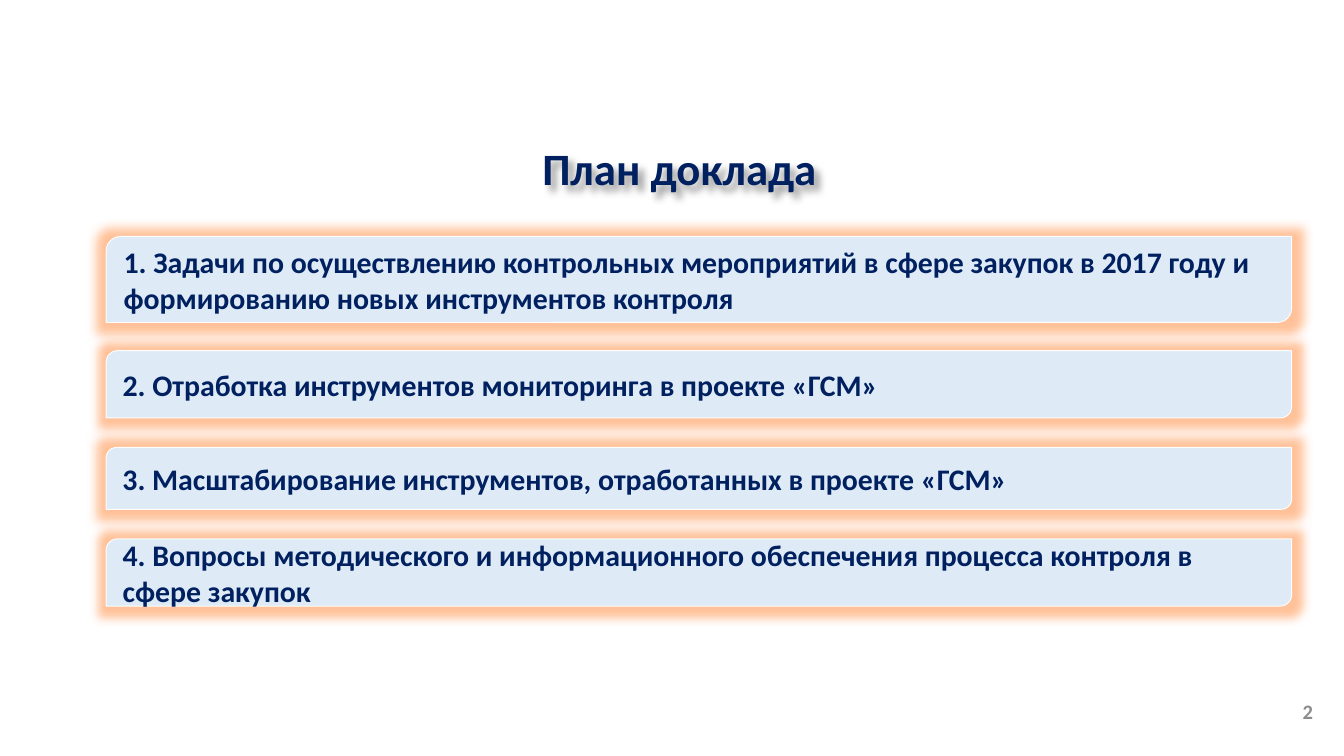
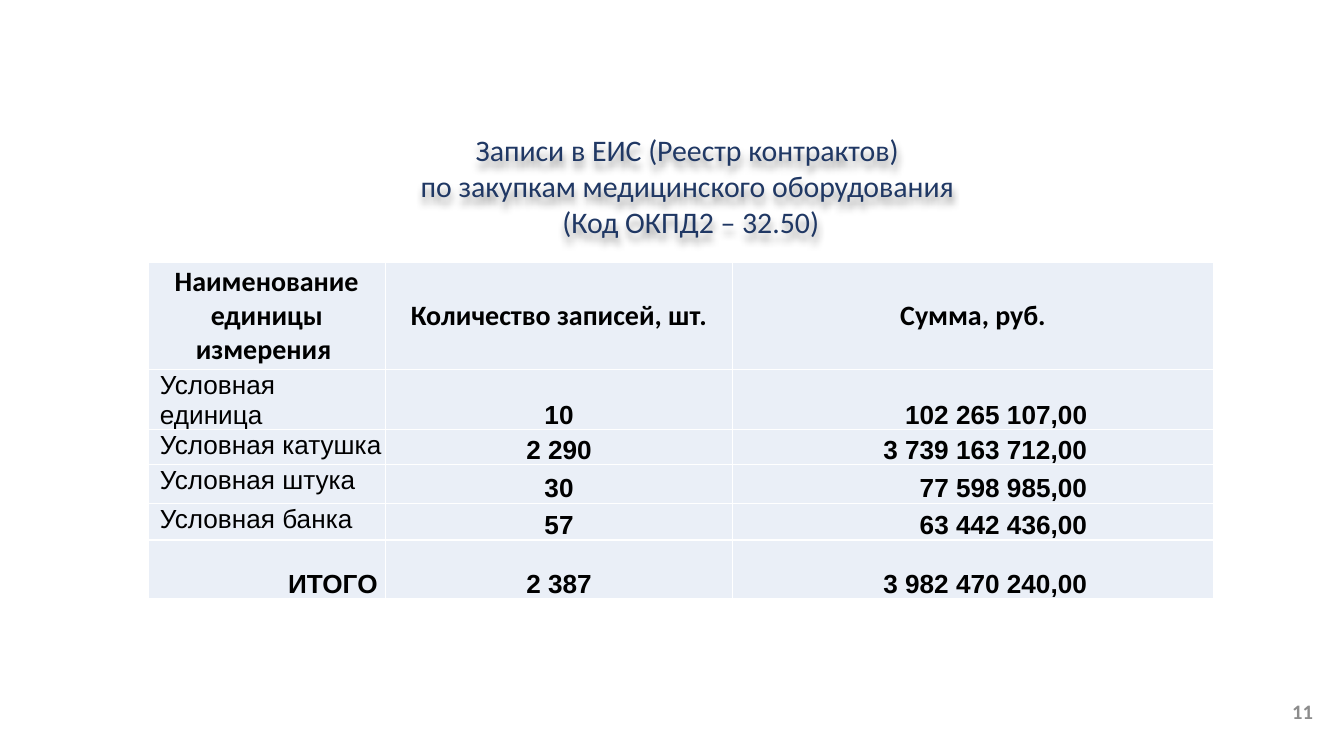
"""Build two slides: a report plan and a table of contract register records."""
from copy import deepcopy
from dataclasses import dataclass

from lxml.etree import SubElement
from pptx import Presentation
from pptx.dml.color import RGBColor
from pptx.enum.shapes import MSO_SHAPE
from pptx.enum.text import MSO_ANCHOR, MSO_AUTO_SIZE, PP_ALIGN
from pptx.oxml.ns import qn
from pptx.util import Emu, Pt

PIXEL = 9144

COLORS = {
    "navy": "002060",
    "blue": "203864",
    "black": "000000",
    "gray": "8C8C8C",
    "white": "FFFFFF",
    "card": "DEEBF7",
    "card_line": "FFFDFB",
    "glow": "FF6600",
    "cell": "EAEFF7",
}


@dataclass(frozen=True)
class Area:
    left: int
    top: int
    width: int
    height: int

    def emu(self) -> tuple[Emu, ...]:
        return tuple(px(n) for n in (self.left, self.top, self.width, self.height))


@dataclass(frozen=True)
class Card:
    text: str
    top: int
    height: int


@dataclass(frozen=True)
class CellStyle:
    size: int = 14
    font: str = "Arial"
    bold: bool = True
    align: PP_ALIGN = PP_ALIGN.CENTER
    anchor: MSO_ANCHOR = MSO_ANCHOR.BOTTOM
    margins: tuple[int, int, int, int] = (7, 0, 7, 0)


HEADER = CellStyle(15, "Calibri", anchor=MSO_ANCHOR.MIDDLE, margins=(6, 0, 6, 0))
UNIT = CellStyle(bold=False, align=PP_ALIGN.LEFT, anchor=MSO_ANCHOR.TOP, margins=(9, 1, 1, 0))
COUNT = CellStyle()
AMOUNT = CellStyle(align=PP_ALIGN.RIGHT, margins=(7, 0, 94, 0))
TOTAL = CellStyle(align=PP_ALIGN.RIGHT, margins=(6, 0, 6, 0))

CARDS_LEFT, CARDS_WIDTH = 79, 882
CARDS = [
    Card("1. Задачи по осуществлению контрольных мероприятий в сфере закупок "
         "в 2017 году и формированию новых инструментов контроля", 176, 64),
    Card("2. Отработка инструментов мониторинга в проекте «ГСМ»", 261, 50),
    Card("3. Масштабирование инструментов, отработанных в проекте «ГСМ»", 333, 46),
    Card("4. Вопросы методического и информационного обеспечения процесса "
         "контроля в сфере закупок", 401, 50),
]

NUMBER_AREA = Area(759, 514, 225, 30)
TABLE_AREA = Area(110, 195, 793, 232)
COLUMN_WIDTHS = [177, 258, 358]
ROW_HEIGHTS = [80, 26, 26, 29, 27, 44]
RECORDS = [
    ("Наименование единицы измерения ", "Количество записей, шт.", "Сумма, руб."),
    ("Условная единица", "10", "102 265 107,00"),
    ("Условная катушка", "2 290", "3 739 163 712,00"),
    ("Условная штука", "30", "77 598 985,00"),
    ("Условная банка", "57", "63 442 436,00"),
    ("ИТОГО", "2 387", "3 982 470 240,00"),
]


def px(length: int) -> Emu:
    return Emu(length * PIXEL)


def rgb(name: str) -> RGBColor:
    return RGBColor.from_string(COLORS[name])


def set_margins(holder, margins: tuple[int, int, int, int]) -> None:
    holder.margin_left, holder.margin_top, holder.margin_right, holder.margin_bottom = map(px, margins)


def write_text(frame, text: str, *, size: int, color: str, font: str = "Calibri",
               bold: bool = True, align: PP_ALIGN = PP_ALIGN.LEFT) -> None:
    paragraph = frame.paragraphs[0]
    paragraph.text = text
    paragraph.alignment = align
    for span in paragraph.runs:
        span.font.name = font
        span.font.size = Pt(size)
        span.font.bold = bold
        span.font.color.rgb = rgb(color)
    properties = paragraph.runs[0]._r.find(qn("a:rPr"))
    for line_break in paragraph._p.findall(qn("a:br")):
        line_break.append(deepcopy(properties))


def add_effect(shape, kind: str, color: str, alpha: int, **settings: int) -> None:
    shape.shadow.inherit = False
    effects = shape._element.spPr.find(qn("a:effectLst"))
    effect = SubElement(effects, qn(f"a:{kind}"), {key: str(value) for key, value in settings.items()})
    tint = SubElement(effect, qn("a:srgbClr"), val=COLORS[color])
    SubElement(tint, qn("a:alpha"), val=str(alpha * 1000))


def prepare_frame(shape, anchor: MSO_ANCHOR, margins: tuple[int, int, int, int]):
    frame = shape.text_frame
    frame.word_wrap = True
    frame.auto_size = MSO_AUTO_SIZE.NONE
    frame.vertical_anchor = anchor
    set_margins(frame, margins)
    return frame


def add_page(deck, title: str, area: Area, number: str, *, size: int, color: str,
             bold: bool, direction: int):
    page = deck.slides.add_slide(deck.slide_layouts[5])
    heading = page.shapes.title
    heading.left, heading.top, heading.width, heading.height = area.emu()
    frame = prepare_frame(heading, MSO_ANCHOR.TOP, (7, 4, 7, 4))
    write_text(frame, title, size=size, color=color, bold=bold, align=PP_ALIGN.CENTER)
    add_effect(heading, "outerShdw", "black", 40, blurRad=50800, dist=44000, dir=direction * 60000)

    box = page.shapes.add_textbox(*NUMBER_AREA.emu())
    frame = prepare_frame(box, MSO_ANCHOR.MIDDLE, (7, 4, 7, 4))
    write_text(frame, number, size=11, color="gray", align=PP_ALIGN.RIGHT)
    return page


def add_card(page, card: Card) -> None:
    area = Area(CARDS_LEFT, card.top, CARDS_WIDTH, card.height)
    box = page.shapes.add_shape(MSO_SHAPE.ROUND_2_DIAG_RECTANGLE, *area.emu())
    box.fill.solid()
    box.fill.fore_color.rgb = rgb("card")
    box.line.color.rgb = rgb("card_line")
    box.line.width = Pt(0.5)
    add_effect(box, "glow", "glow", 40, rad=139700)
    frame = prepare_frame(box, MSO_ANCHOR.MIDDLE, (10, 5, 10, 5))
    write_text(frame, card.text, size=16, color="navy")


def add_borders(cell) -> None:
    properties = cell._tc.get_or_add_tcPr()
    for side in ("lnL", "lnR", "lnT", "lnB"):
        border = SubElement(properties, qn(f"a:{side}"), w=str(Pt(1)))
        fill = SubElement(border, qn("a:solidFill"))
        SubElement(fill, qn("a:srgbClr"), val=COLORS["white"])


def cell_style(row: int, column: int) -> CellStyle:
    if row == 0:
        return HEADER
    if column == 0:
        return TOTAL if row == len(RECORDS) - 1 else UNIT
    return COUNT if column == 1 else AMOUNT


def fill_cell(cell, text: str, style: CellStyle) -> None:
    add_borders(cell)
    cell.fill.solid()
    cell.fill.fore_color.rgb = rgb("cell")
    cell.vertical_anchor = style.anchor
    set_margins(cell, style.margins)
    write_text(cell.text_frame, text, size=style.size, color="black", font=style.font,
               bold=style.bold, align=style.align)


def add_records_table(page) -> None:
    table = page.shapes.add_table(len(RECORDS), len(COLUMN_WIDTHS), *TABLE_AREA.emu()).table
    table.first_row = table.horz_banding = False
    for column, width in zip(table.columns, COLUMN_WIDTHS):
        column.width = px(width)
    for row, height in zip(table.rows, ROW_HEIGHTS):
        row.height = px(height)
    for row, record in enumerate(RECORDS):
        for column, text in enumerate(record):
            fill_cell(table.cell(row, column), text, cell_style(row, column))


def build_plan(deck) -> None:
    page = add_page(deck, "План доклада", Area(210, 101, 591, 48), "2",
                    size=24, color="navy", bold=True, direction=45)
    for card in CARDS:
        add_card(page, card)


def build_records(deck) -> None:
    title = "Записи в ЕИС (Реестр контрактов) \nпо закупкам медицинского оборудования \n(Код ОКПД2 – 32.50)"
    page = add_page(deck, title, Area(85, 94, 858, 92), "11",
                    size=16, color="blue", bold=False, direction=90)
    add_records_table(page)


def main() -> None:
    deck = Presentation()
    deck.slide_width = px(1000)
    deck.slide_height = deck.slide_width * 9 // 16
    build_plan(deck)
    build_records(deck)
    deck.save("out.pptx")


if __name__ == "__main__":
    main()
